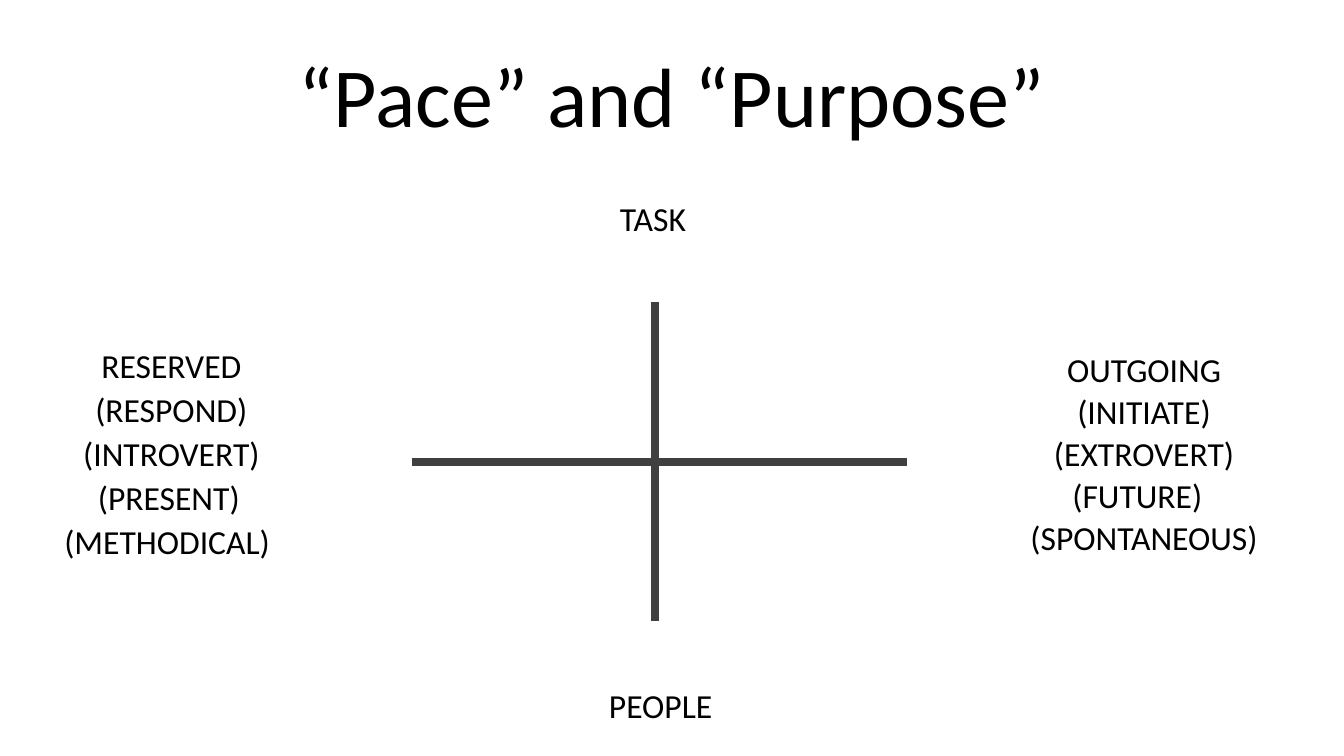
from collections import namedtuple

from lxml.etree import SubElement
from pptx import Presentation
from pptx.dml.color import RGBColor
from pptx.enum.shapes import MSO_CONNECTOR
from pptx.enum.text import MSO_ANCHOR, MSO_AUTO_SIZE, PP_ALIGN
from pptx.oxml.ns import qn
from pptx.util import Inches, Pt

COLUMNS, ROWS = 160, 90
CELL = Inches(13.33) / COLUMNS
COLORS = {"background": "FFFFFF", "text": "000000", "axis": "404040"}
FONT = "Calibri"
LABEL_HEIGHT = 6

Box = namedtuple("Box", "left top width height")
Trait = namedtuple("Trait", "wording width shift")

RESERVED = [
    Trait("RESERVED", 34, 0),
    Trait("(RESPOND)", 29.8, 0),
    Trait("(INTROVERT)", 30.2, 0),
    Trait("(PRESENT)", 28.7, -0.3),
    Trait("(METHODICAL)", 30.7, -0.5),
]
OUTGOING = [
    Trait("OUTGOING", 36, 0),
    Trait("(INITIATE)", 30.5, 0),
    Trait("(EXTROVERT)", 28.1, 0),
    Trait("(FUTURE)", 25.1, -0.8),
    Trait("(SPONTANEOUS)", 33.1, 0),
]


def cells(*counts):
    return [round(count * CELL) for count in counts]


def add_label(slide, box, wording, size=24, anchor=MSO_ANCHOR.TOP):
    frame = slide.shapes.add_textbox(*cells(*box)).text_frame
    frame.word_wrap = True
    frame.auto_size = MSO_AUTO_SIZE.NONE
    frame.vertical_anchor = anchor
    paragraph = frame.paragraphs[0]
    paragraph.alignment = PP_ALIGN.CENTER
    run = paragraph.add_run()
    run.text = wording
    run.font.name = FONT
    run.font.size = Pt(size)
    run.font.color.rgb = RGBColor.from_string(COLORS["text"])


def add_axis(slide, *ends):
    axis = slide.shapes.add_connector(MSO_CONNECTOR.STRAIGHT, *cells(*ends))
    axis.line.color.rgb = RGBColor.from_string(COLORS["axis"])
    axis.line.width = Pt(6)
    SubElement(axis._element.spPr, qn("a:effectLst"))


def add_cross(slide, box):
    pace_row = box.top + box.height / 2
    purpose_column = box.left + box.width / 2 - 0.5
    add_axis(slide, purpose_column, box.top, purpose_column, box.top + box.height)
    add_axis(slide, box.left, pace_row, box.left + box.width, pace_row)


def add_purpose(slide, box):
    task_width = box.width * 0.75
    task = Box(box.left + 2, box.top, task_width, LABEL_HEIGHT)
    people_top = box.top + box.height - LABEL_HEIGHT
    people = Box(box.left, people_top, box.width, LABEL_HEIGHT)
    add_label(slide, task, "TASK")
    add_label(slide, people, "PEOPLE")


def add_traits(slide, box, traits):
    pitch = (box.height - LABEL_HEIGHT) / (len(traits) - 1)
    for index, trait in enumerate(traits):
        left = box.left + (box.width - trait.width) / 2 + trait.shift
        top = box.top + index * pitch
        add_label(slide, Box(left, top, trait.width, LABEL_HEIGHT), trait.wording)


def main():
    deck = Presentation()
    deck.slide_width = Inches(13.33)
    deck.slide_height = Inches(7.5)
    slide = deck.slides.add_slide(deck.slide_layouts[6])
    slide.background.fill.solid()
    slide.background.fill.fore_color.rgb = RGBColor.from_string(COLORS["background"])

    title = Box(COLUMNS / 8, 1.5, COLUMNS * 0.75, 19.3)
    add_label(slide, title, "“Pace” and “Purpose”", 60, MSO_ANCHOR.MIDDLE)
    add_cross(slide, Box(49, 36, 59, 38))
    add_purpose(slide, Box(67, 23, 23.3, ROWS - 26 + LABEL_HEIGHT - 6))
    add_traits(slide, Box(3.4, 40.5, 34, 27), RESERVED)
    add_traits(slide, Box(118.2, 41, 36, 26), OUTGOING)
    deck.save("out.pptx")


if __name__ == "__main__":
    main()
